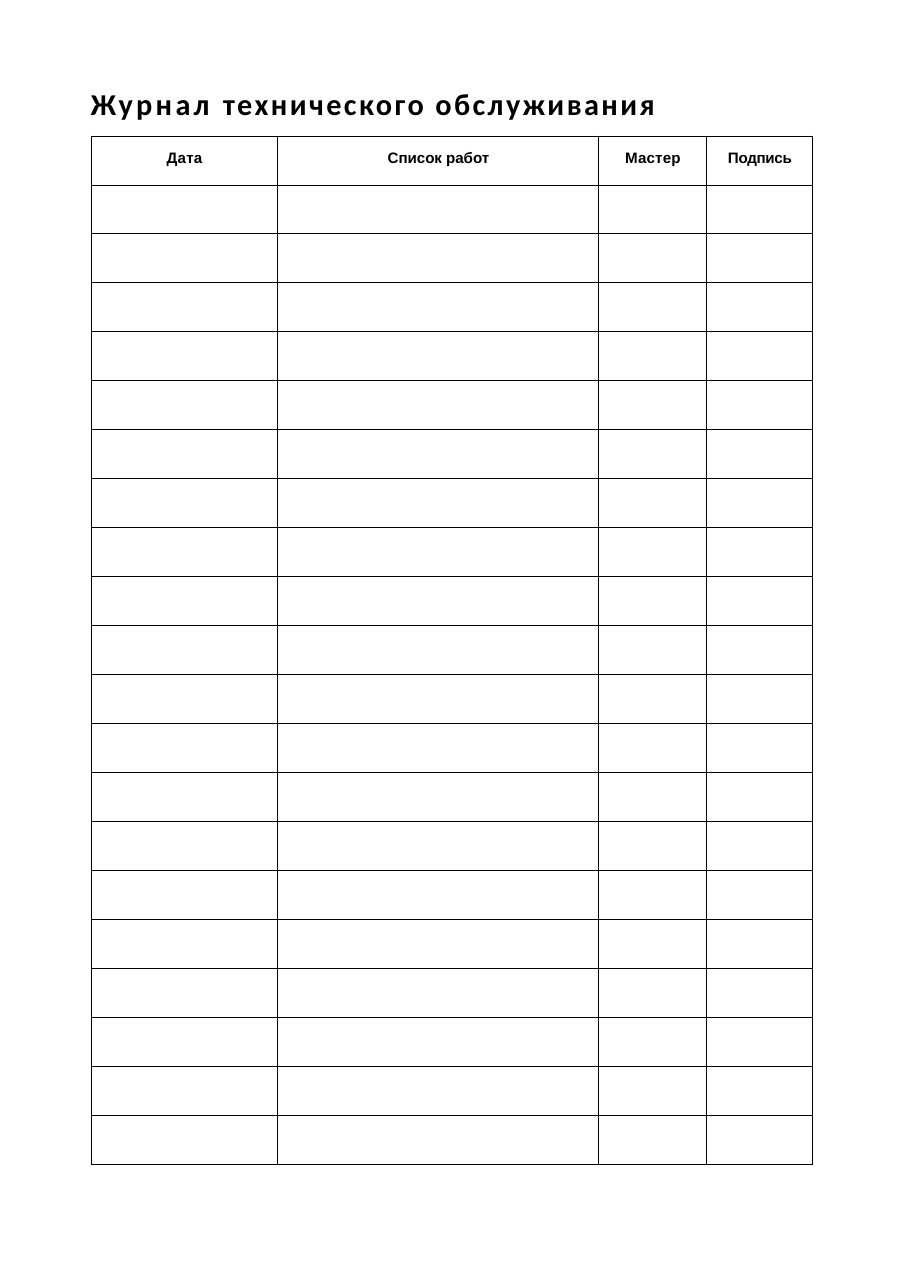
from pptx import Presentation
from pptx.dml.color import RGBColor
from pptx.enum.text import MSO_ANCHOR, PP_ALIGN
from pptx.util import Pt
from lxml.etree import SubElement
from pptx.oxml.ns import qn

# text, letter spacing in hundredths of a point
TITLE = [("Журнал ", 150), ("технического обслуживания", 110)]
# heading, letter spacing, column width in px
COLUMNS = [
    ("Дата", 10, 187),
    ("Список работ", 0, 321),
    ("Мастер", 10, 108),
    ("Подпись", -10, 106),
]
BLANK_ROWS = 20

PAGE_W, PAGE_H = 908, 1288
LEFT, TITLE_TOP, TABLE_TOP = 91, 83, 136
TITLE_W, TITLE_H = 575, 40
ROW_H, HEAD_PAD = 49, 14
BLACK = RGBColor(0, 0, 0)
WHITE = RGBColor(255, 255, 255)


def px(n):
    return n * 5873


def style(para, face, size):
    font = para.font
    font.name, font.size, font.bold = face, Pt(size), True
    font.color.rgb = BLACK


def add_run(para, text, spacing):
    run = para.add_run()
    run.text = text
    run.font._element.set("spc", str(spacing))


def add_borders(cell):
    props = cell._tc.get_or_add_tcPr()
    for side in ("lnL", "lnR", "lnT", "lnB"):
        line = SubElement(props, qn(f"a:{side}"), w=str(Pt(0.5)))
        fill = SubElement(line, qn("a:solidFill"))
        SubElement(fill, qn("a:srgbClr"), val=str(BLACK))


def add_title(slide):
    box = slide.shapes.add_textbox(px(LEFT), px(TITLE_TOP), px(TITLE_W), px(TITLE_H))
    frame = box.text_frame
    frame.word_wrap = True
    frame.margin_left = frame.margin_right = frame.margin_bottom = 0
    frame.margin_top = px(2)
    para = frame.paragraphs[0]
    style(para, "Calibri", 14)
    for text, spacing in TITLE:
        add_run(para, text, spacing)


def add_log(slide):
    rows = BLANK_ROWS + 1
    width = sum(col[2] for col in COLUMNS)
    table = slide.shapes.add_table(
        rows, len(COLUMNS), px(LEFT), px(TABLE_TOP), px(width), px(rows * ROW_H)
    ).table
    table.first_row = table.horz_banding = False
    for row in table.rows:
        row.height = px(ROW_H)
    for cell in table.iter_cells():
        cell.margin_left = cell.margin_right = 0
        cell.margin_top = cell.margin_bottom = 0
        add_borders(cell)
        cell.fill.solid()
        cell.fill.fore_color.rgb = WHITE
        style(cell.text_frame.paragraphs[0], "Arial", 7)
    for i, (text, spacing, wide) in enumerate(COLUMNS):
        table.columns[i].width = px(wide)
        cell = table.cell(0, i)
        cell.margin_top = px(HEAD_PAD)
        cell.vertical_anchor = MSO_ANCHOR.TOP
        para = cell.text_frame.paragraphs[0]
        para.alignment = PP_ALIGN.CENTER
        add_run(para, text, spacing)


def main():
    deck = Presentation()
    deck.slide_width, deck.slide_height = px(PAGE_W), px(PAGE_H)
    slide = deck.slides.add_slide(deck.slide_layouts[6])
    add_title(slide)
    add_log(slide)
    deck.save("out.pptx")


if __name__ == "__main__":
    main()
